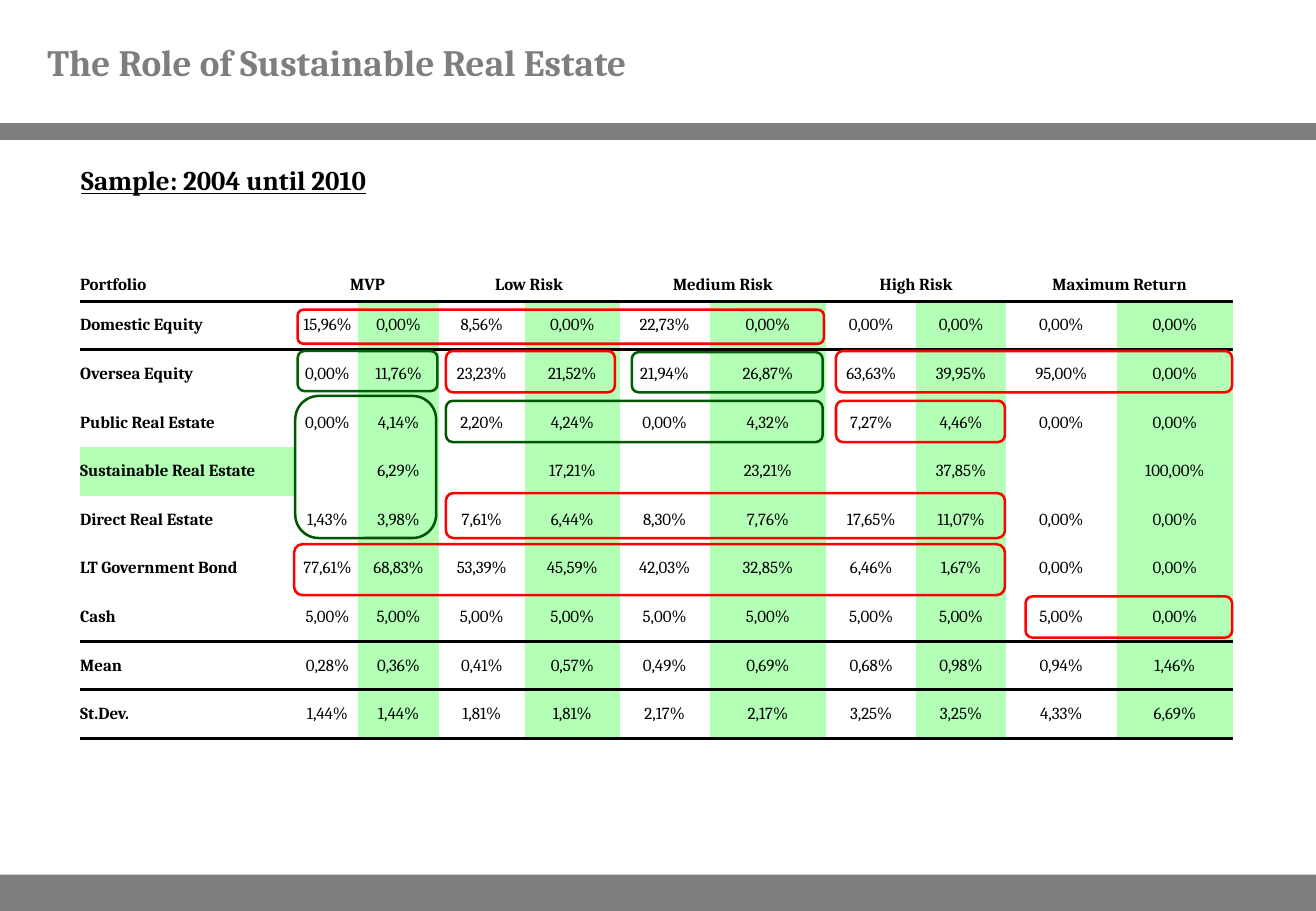
from dataclasses import dataclass

from lxml.etree import SubElement
from pptx import Presentation
from pptx.dml.color import RGBColor
from pptx.enum.shapes import MSO_CONNECTOR, MSO_SHAPE
from pptx.enum.text import MSO_ANCHOR, MSO_AUTO_SIZE, PP_ALIGN
from pptx.oxml.ns import qn
from pptx.util import Inches, Pt

COLORS: dict[str, str] = {
    "grey": "7F7E7D", "black": "000000", "mint": "B2FFB5",
    "red": "FF0000", "green": "005603", "leaf": "005E04",
}
SLIDE_WIDTH, SLIDE_HEIGHT = 10.83, 7.5
PLAIN_TABLE_STYLE = "{2D5ABB26-0587-4C30-8999-92F81FD0307C}"

PORTFOLIOS = ["MVP", "Low Risk", "Medium Risk", "High Risk", "Maximum Return"]
COLUMN_WIDTHS = [1.78, 0.51, 0.66, 0.71, 0.78, 0.74, 0.96, 0.74, 0.74, 0.91, 0.96]
HEADER_HEIGHT, ROW_HEIGHT = 0.27, 0.4
RULED_ROWS = {0, 7, 9}  # rows with a thick rule below them
SUSTAINABLE = "Sustainable Real Estate"

# Weights in percent: each portfolio without, then with, sustainable real estate
WEIGHTS: dict[str, str] = {
    "Domestic Equity": "15,96 0,00 8,56 0,00 22,73 0,00 0,00 0,00 0,00 0,00",
    "Oversea Equity": "0,00 11,76 23,23 21,52 21,94 26,87 63,63 39,95 95,00 0,00",
    "Public Real Estate": "0,00 4,14 2,20 4,24 0,00 4,32 7,27 4,46 0,00 0,00",
    SUSTAINABLE: "- 6,29 - 17,21 - 23,21 - 37,85 - 100,00",
    "Direct Real Estate": "1,43 3,98 7,61 6,44 8,30 7,76 17,65 11,07 0,00 0,00",
    "LT Government Bond": "77,61 68,83 53,39 45,59 42,03 32,85 6,46 1,67 0,00 0,00",
    "Cash": "5,00 5,00 5,00 5,00 5,00 5,00 5,00 5,00 5,00 0,00",
    "Mean": "0,28 0,36 0,41 0,57 0,49 0,69 0,68 0,98 0,94 1,46",
    "St.Dev.": "1,44 1,44 1,81 1,81 2,17 2,17 3,25 3,25 4,33 6,69",
}


@dataclass(frozen=True)
class Highlight:
    left: float
    top: float
    width: float
    height: float
    color: str = "red"


HIGHLIGHTS = [
    Highlight(2.43, 3.26, 1.16, 1.17, "green"),
    Highlight(2.42, 4.48, 5.85, 0.42),
    Highlight(2.45, 2.55, 4.33, 0.28),
    Highlight(3.67, 2.89, 1.39, 0.34),
    Highlight(3.67, 3.3, 3.1, 0.34, "green"),
    Highlight(6.88, 3.3, 1.39, 0.34),
    Highlight(3.67, 4.06, 4.6, 0.37),
    Highlight(2.45, 2.89, 1.15, 0.33, "leaf"),
    Highlight(6.88, 2.89, 3.26, 0.34),
    Highlight(8.44, 4.91, 1.7, 0.34),
    Highlight(5.2, 2.9, 1.57, 0.33, "leaf"),
]


def rgb(name: str) -> RGBColor:
    return RGBColor.from_string(COLORS[name])


def write(frame, text: str, size: float, color: str = "black",
          align=PP_ALIGN.LEFT, **extra) -> None:
    paragraph = frame.paragraphs[0]
    paragraph.alignment = align
    run = paragraph.add_run()
    run.text = text
    run.font.color.rgb = rgb(color)
    for name, value in {"name": "Cambria", "size": Pt(size), **extra}.items():
        setattr(run.font, name, value)


def add_rule(cell, side: str) -> None:
    line = SubElement(cell._tc.get_or_add_tcPr(), qn(f"a:{side}"), w=str(Pt(2)))
    fill = SubElement(line, qn("a:solidFill"))
    SubElement(fill, qn("a:srgbClr"), val=COLORS["black"])


def format_cell(cell, row: int, tinted: bool) -> None:
    margins = dict.fromkeys(
        ["margin_left", "margin_right", "margin_top", "margin_bottom"], 0)
    for name, value in {**margins, "vertical_anchor": MSO_ANCHOR.MIDDLE}.items():
        setattr(cell, name, value)
    if row - 1 in RULED_ROWS:
        add_rule(cell, "lnT")
    if row in RULED_ROWS:
        add_rule(cell, "lnB")
    if tinted:
        cell.fill.solid()
        cell.fill.fore_color.rgb = rgb("mint")
    else:
        cell.fill.background()


def add_weights_table(slide) -> None:
    header = ["Portfolio"] + [text for name in PORTFOLIOS for text in (name, "")]
    rows = [header] + [
        [asset] + ["" if weight == "-" else f"{weight}%" for weight in weights.split()]
        for asset, weights in WEIGHTS.items()
    ]
    heights = [HEADER_HEIGHT] + [ROW_HEIGHT] * len(WEIGHTS)
    table = slide.shapes.add_table(
        len(rows), len(header), Inches(0.66), Inches(2.21),
        Inches(sum(COLUMN_WIDTHS)), Inches(sum(heights))).table
    table.first_row = table.horz_banding = False
    table._tbl.tblPr.find(qn("a:tableStyleId")).text = PLAIN_TABLE_STYLE
    for column, width in zip(table.columns, COLUMN_WIDTHS):
        column.width = Inches(width)
    for r, (texts, height) in enumerate(zip(rows, heights)):
        table.rows[r].height = Inches(height)
        for c, text in enumerate(texts):
            cell = table.cell(r, c)
            with_sustainable = r > 0 and c > 0 and c % 2 == 0
            format_cell(cell, r, with_sustainable or text == SUSTAINABLE)
            write(cell.text_frame, text, 10, bold=r == 0 or c == 0,
                  align=PP_ALIGN.CENTER if c else PP_ALIGN.LEFT)
    for c in range(1, len(header), 2):
        table.cell(0, c).merge(table.cell(0, c + 1))


def add_highlight(slide, mark: Highlight) -> None:
    outline = slide.shapes.add_shape(
        MSO_SHAPE.ROUNDED_RECTANGLE, Inches(mark.left), Inches(mark.top),
        Inches(mark.width), Inches(mark.height))
    outline.shadow.inherit = False
    outline.fill.background()
    outline.line.color.rgb = rgb(mark.color)
    outline.line.width = Pt(1.5)


def add_bars(slide) -> None:
    divider = slide.shapes.add_connector(
        MSO_CONNECTOR.STRAIGHT, 0, Inches(1.08), Inches(SLIDE_WIDTH), Inches(1.08))
    divider.line.color.rgb = rgb("grey")
    divider.line.width = Pt(10)
    SubElement(divider._element.spPr, qn("a:effectLst"))
    footer = slide.shapes.add_shape(
        MSO_SHAPE.RECTANGLE, 0, Inches(7.2), Inches(SLIDE_WIDTH), Inches(0.3))
    footer.shadow.inherit = False
    footer.fill.solid()
    footer.fill.fore_color.rgb = rgb("grey")
    footer.line.fill.background()


def add_headings(slide) -> None:
    title = slide.shapes.title
    title.left, title.top = 0, 0
    title.width, title.height = Inches(SLIDE_WIDTH), Inches(1.01)
    title_format = {
        "margin_left": Inches(0.39), "margin_right": Inches(0.39),
        "margin_top": 0, "margin_bottom": 0, "word_wrap": True,
        "vertical_anchor": MSO_ANCHOR.MIDDLE, "auto_size": MSO_AUTO_SIZE.NONE,
    }
    for name, value in title_format.items():
        setattr(title.text_frame, name, value)
    write(title.text_frame, "The Role of Sustainable Real Estate", 22, "grey", bold=True)

    sample = slide.shapes.add_textbox(
        Inches(0.57), Inches(1.3), Inches(7.46), Inches(0.37)).text_frame
    sample.word_wrap = True
    write(sample, "Sample: 2004 until 2010", 16, bold=True, underline=True)


def main() -> None:
    deck = Presentation()
    deck.slide_width, deck.slide_height = Inches(SLIDE_WIDTH), Inches(SLIDE_HEIGHT)
    slide = deck.slides.add_slide(deck.slide_layouts.get_by_name("Title Only"))
    # Frame and headings
    add_bars(slide)
    add_headings(slide)
    # Portfolio weights with the marked cells
    add_weights_table(slide)
    for mark in HIGHLIGHTS:
        add_highlight(slide, mark)
    deck.save("out.pptx")


if __name__ == "__main__":
    main()
